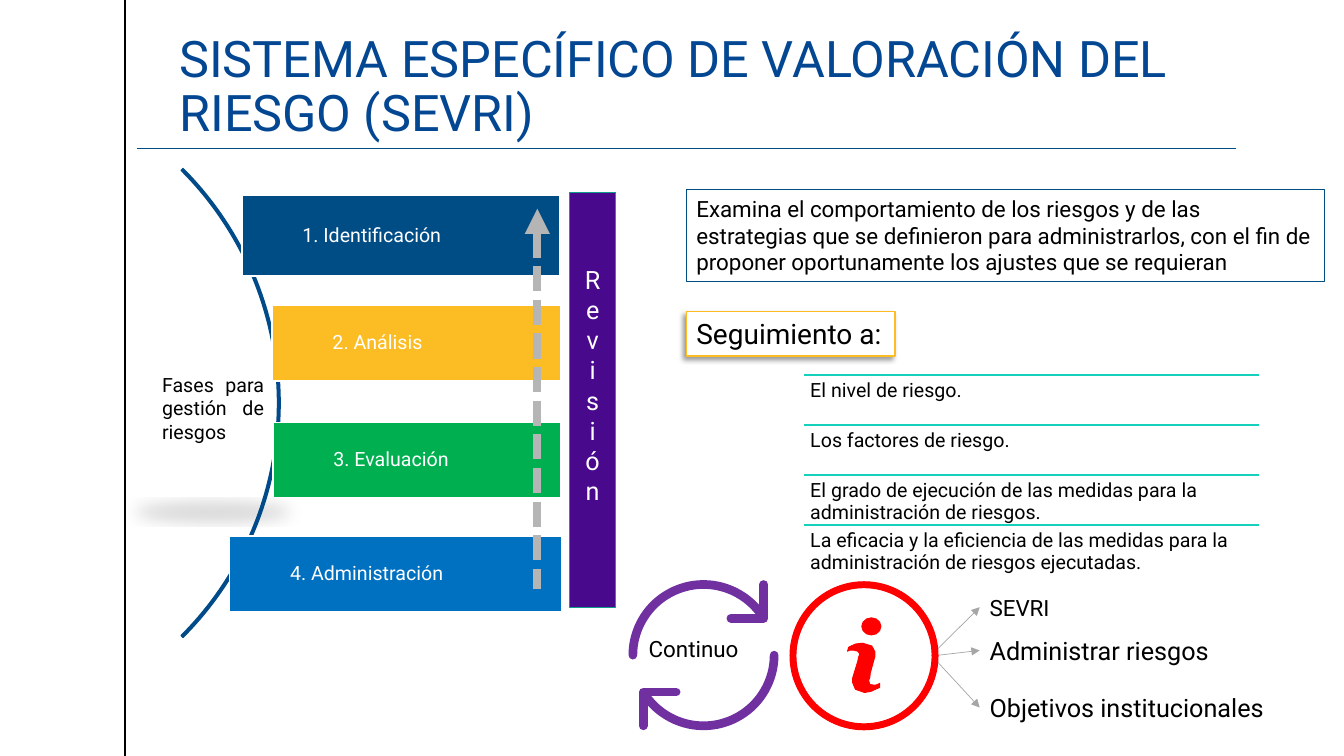
from math import cos, radians, sin

from lxml import etree
from pptx import Presentation
from pptx import util as u
from pptx.dml.color import RGBColor
from pptx.enum import dml, shapes, text
from pptx.oxml.ns import qn

Cm, Pt = u.Cm, u.Pt
SHAPE, ALIGN, ANCHOR = shapes.MSO_SHAPE, text.PP_ALIGN, text.MSO_ANCHOR
FONT = "Roboto"

BLACK = RGBColor(0x00, 0x00, 0x00)
WHITE = RGBColor(0xFF, 0xFF, 0xFF)
TITLE_BLUE = RGBColor(0x03, 0x47, 0x93)
NAVY = RGBColor(0x00, 0x4D, 0x86)
YELLOW = RGBColor(0xFC, 0xBD, 0x24)
GREEN = RGBColor(0x00, 0xB0, 0x50)
BLUE = RGBColor(0x00, 0x70, 0xC0)
VIOLET = RGBColor(0x48, 0x09, 0x8D)
PURPLE = RGBColor(0x70, 0x30, 0xA0)
TEAL = RGBColor(0x10, 0x9B, 0x8A)
TURQUOISE = RGBColor(0x15, 0xD1, 0xBB)
GREY = RGBColor(0xA6, 0xA6, 0xA6)
DASH_GREY = RGBColor(0xB5, 0xB5, 0xB5)
RED = RGBColor(0xFF, 0x00, 0x00)

# label, left, top, width, height, fill
PHASES = [
    ("1. Identificación", 6.1, 4.93, 8.0, 2.03, NAVY),
    ("2. Análisis", 6.86, 7.7, 7.26, 1.9, YELLOW),
    ("3. Evaluación", 6.88, 10.64, 7.26, 1.9, GREEN),
    ("4. Administración", 5.79, 13.51, 8.36, 1.9, BLUE),
]
FOLLOW_UPS = [
    "El nivel de riesgo.",
    "Los factores de riesgo.",
    "El grado de ejecución de las medidas para la administración de riesgos.",
    "La eficacia y la eficiencia de las medidas para la administración de riesgos ejecutadas.",
]
# label, top, width, height, size, arrow start
INFORMS = [
    ("SEVRI", 14.83, 5.21, 0.94, 16, 23.47),
    ("Administrar riesgos", 15.88, 6.76, 1.02, 18, 23.65),
    ("Objetivos institucionales", 17.32, 8.51, 1.02, 18, 23.47),
]
LETTER_I = [
    (22.05, 17.27), (21.92, 17.25), (21.89, 17.15), (21.92, 17.07), (21.93, 16.97),
    (22.02, 16.64), (22.05, 16.54), (22.05, 16.43), (21.97, 16.28), (21.74, 16.21),
    (21.56, 16.23), (21.39, 16.31), (21.36, 16.41), (21.41, 16.38), (21.51, 16.38),
    (21.62, 16.41), (21.67, 16.48), (21.64, 16.56), (21.62, 16.66), (21.51, 17.02),
    (21.49, 17.09), (21.49, 17.2), (21.56, 17.37), (21.79, 17.45), (21.95, 17.42),
    (22.17, 17.32), (22.17, 17.22), (22.12, 17.25),
]


def write_text(box, words, size, color=BLACK, align=ALIGN.LEFT, anchor=ANCHOR.TOP,
               spacing=1.0, insets=(0.25, 0.13, 0.25, 0.13)):
    """Fill a shape with one styled paragraph; insets are left, top, right, bottom in cm."""
    frame = box.text_frame
    frame.word_wrap = True
    frame.vertical_anchor = anchor
    (frame.margin_left, frame.margin_top,
     frame.margin_right, frame.margin_bottom) = [Cm(inset) for inset in insets]
    para = frame.paragraphs[0]
    para.alignment = align
    para.line_spacing = spacing
    span = para.add_run()
    span.text = words
    span.font.name, span.font.size = FONT, Pt(size)
    span.font.color.rgb = color


def add_label(page, place, words, size, **style):
    box = page.shapes.add_textbox(*[Cm(length) for length in place])
    write_text(box, words, size, **style)
    return box


def paint(shape, fill=None, line=None, width=1):
    shape.shadow.inherit = False
    if fill is None:
        shape.fill.background()
    else:
        shape.fill.solid()
        shape.fill.fore_color.rgb = fill
    if line is None:
        shape.line.fill.background()
    else:
        shape.line.color.rgb = line
        shape.line.width = Pt(width)


def add_block(page, kind, place, fill=None, line=None, width=1):
    shape = page.shapes.add_shape(kind, *[Cm(length) for length in place])
    paint(shape, fill, line, width)
    return shape


def add_shadow(shape, opacity, **settings):
    effects = shape._element.spPr.find(qn("a:effectLst"))
    shadow = etree.SubElement(effects, qn("a:outerShdw"), rotWithShape="0",
                              **{name: str(value) for name, value in settings.items()})
    color = etree.SubElement(shadow, qn("a:srgbClr"), val="000000")
    etree.SubElement(color, qn("a:alpha"), val=str(opacity * 1000))


def add_line(page, ends, color, width, arrow=None, dash=None, target=None):
    """Draw a line; arrow is headEnd or tailEnd, target is joined at its left side."""
    line = page.shapes.add_connector(shapes.MSO_CONNECTOR.STRAIGHT,
                                     *[Cm(length) for length in ends])
    if target is not None:
        line.end_connect(target, 1)
    line.line.color.rgb = color
    line.line.width = Pt(width)
    if dash:
        line.line.dash_style = dash
    properties = line._element.spPr
    if arrow:
        etree.SubElement(properties.find(qn("a:ln")), qn("a:" + arrow), type="triangle")
    etree.SubElement(properties, qn("a:effectLst"))


def add_outline(page, strokes, closed=False):
    """Build one freeform from lists of points in cm."""
    points = [[(Cm(x), Cm(y)) for x, y in stroke] for stroke in strokes]
    builder = page.shapes.build_freeform(*points[0][0])
    for number, stroke in enumerate(points):
        if number:
            builder.move_to(*stroke[0])
        builder.add_line_segments(stroke[1:], close=closed)
    return builder.convert_to_shape()


def add_phases(page):
    arc = add_block(page, SHAPE.BLOCK_ARC, (-9.65, 1.8, 16.71, 16.71), TITLE_BLUE, NAVY)
    for index, value in enumerate((189, 27, 0.004)):
        arc.adjustments[index] = value
    for label, *place, fill in PHASES:
        bar = add_block(page, SHAPE.RECTANGLE, place, fill, WHITE)
        write_text(bar, label, 14, WHITE, anchor=ANCHOR.MIDDLE, spacing=0.9,
                   insets=(1.52, 0.1, 0.1, 0.1))


def add_review(page):
    column = add_block(page, SHAPE.RECTANGLE, (14.35, 4.85, 1.17, 10.46), VIOLET, TEAL)
    write_text(column, "Revisión ", 18, WHITE, ALIGN.CENTER, ANCHOR.MIDDLE)
    column.text_frame._txBody.bodyPr.set("vert", "wordArtVert")
    add_line(page, (13.54, 5.26, 13.54, 14.83), DASH_GREY, 6, "headEnd",
             dml.MSO_LINE.SQUARE_DOT)


def add_follow_ups(page):
    left, width, step = 20.27, 11.46, 1.26
    for row, words in enumerate(FOLLOW_UPS):
        top = 9.45 + row * step
        add_line(page, (left, top, left + width, top), TURQUOISE, 1)
        add_label(page, (left, top, width, step), words, 14, spacing=0.9,
                  insets=(0.15, 0.15, 0.15, 0.15))


def add_cycle(page):
    """Draw two half-turn arrows, the second being the first turned by 180 degrees."""
    x, y, radius = 17.73, 16.51, 1.78
    bend = [(radius * cos(radians(angle)), -radius * sin(radians(angle)))
            for angle in range(180, 32, -3)]
    hook = [(1.52, -1.78), (1.52, -0.93), (0.69, -0.93)]
    for turn in (1, -1):
        arrow = add_outline(page, [[(x + turn * dx, y + turn * dy) for dx, dy in stroke]
                                   for stroke in (bend, hook)])
        paint(arrow, None, PURPLE, 6.2)
        stroke_style = arrow._element.spPr.find(qn("a:ln"))
        stroke_style.set("cap", "rnd")
        etree.SubElement(stroke_style, qn("a:round"))
    add_label(page, (16.1, 15.88, 3.2, 0.94), "Continuo", 16)


def add_information(page):
    for words, top, width, height, size, start in INFORMS:
        label = add_label(page, (24.69, top, width, height), words, size)
        add_line(page, (start, 16.51, 24.69, top + height / 2), GREY, 0.5, "tailEnd",
                 target=label)
    ring = add_block(page, SHAPE.DONUT, (19.91, 14.66, 3.73, 3.73), RED, RED, 0.75)
    ring.adjustments[0] = 0.04
    add_block(page, SHAPE.OVAL, (21.72, 15.57, 0.48, 0.43), RED, RED, 0.75)
    paint(add_outline(page, [LETTER_I], closed=True), RED, RED, 0.75)


def main():
    deck = Presentation()
    deck.slide_width, deck.slide_height = Cm(33.87), Cm(19.05)
    page = deck.slides.add_slide(deck.slide_layouts[6])

    add_line(page, (3.15, 0, 3.15, 19.05), BLACK, 1)
    heading = add_block(page, SHAPE.OVAL, (3.2, 8.84, 4.34, 2.9), WHITE)
    add_shadow(heading, 15, blurRad=Pt(12), dist=Pt(25), dir=90 * 60000,
               sx=90000, sy=-19000)
    write_text(heading, "Fases para gestión de riesgos", 14, align=ALIGN.JUSTIFY)
    add_label(page, (4.52, 0.94, 28.14, 2.79),
              "SISTEMA ESPECÍFICO DE VALORACIÓN DEL RIESGO (SEVRI)", 36, color=TITLE_BLUE,
              anchor=ANCHOR.BOTTOM, spacing=0.9, insets=(0, 0.13, 0, 0.13))
    add_line(page, (3.45, 3.73, 31.14, 3.73), NAVY, 0.5)

    add_phases(page)
    purpose = add_block(page, SHAPE.RECTANGLE, (17.3, 4.78, 16.08, 2.31), None, NAVY, 0.75)
    write_text(purpose, "Examina el comportamiento de los riesgos y de las estrategias que se "
               "definieron para administrarlos, con el fin de proponer oportunamente los "
               "ajustes que se requieran", 16)
    tracking = add_block(page, SHAPE.RECTANGLE, (17.3, 7.85, 5.26, 1.12), WHITE, YELLOW)
    add_shadow(tracking, 40, blurRad=Pt(4), dist=Pt(3), dir=135 * 60000)
    write_text(tracking, "Seguimiento a:", 20)
    add_follow_ups(page)
    add_cycle(page)
    add_information(page)
    add_review(page)
    deck.save("out.pptx")


if __name__ == "__main__":
    main()
